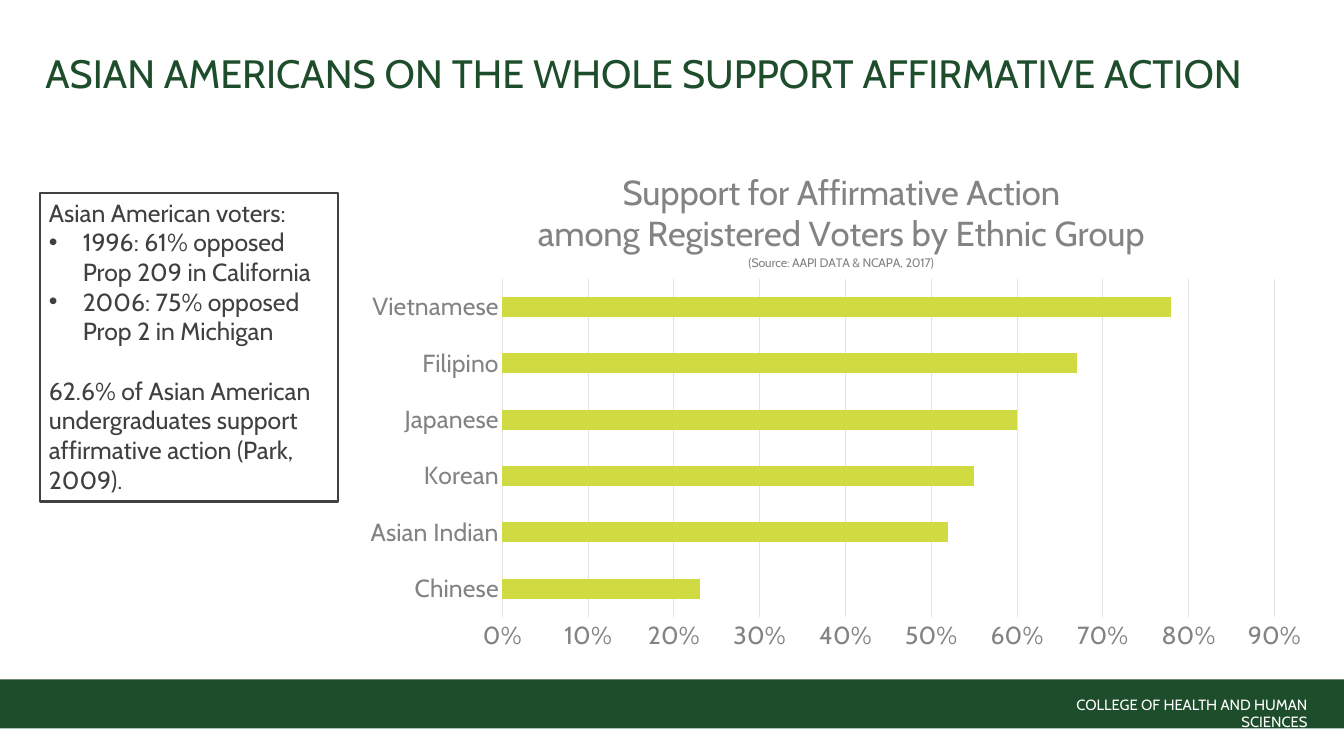
from dataclasses import dataclass

from lxml.etree import SubElement as Sub
from pptx import Presentation
from pptx.chart.data import CategoryChartData as Data
from pptx.dml.color import RGBColor as RGB
from pptx.enum.chart import XL_CHART_TYPE as Kind, XL_TICK_MARK as Tick
from pptx.enum.shapes import MSO_SHAPE as Form
from pptx.enum.text import MSO_ANCHOR as Anchor, MSO_AUTO_SIZE as Fit, PP_ALIGN as Align
from pptx.oxml.ns import qn
from pptx.util import Inches, Pt


@dataclass(frozen=True)
class Theme:
    face: str = "Cabin"
    green: RGB = RGB(0x1E, 0x4D, 0x2B)
    lime: RGB = RGB(0xD0, 0xDB, 0x42)
    ink: RGB = RGB(0x40, 0x40, 0x40)
    edge: RGB = RGB(0x40, 0x41, 0x40)
    gray: RGB = RGB(0x82, 0x84, 0x82)
    rule: RGB = RGB(0xE2, 0xE3, 0xE2)
    white: RGB = RGB(0xFF, 0xFF, 0xFF)
    head: int = 32
    chart: int = 28
    body: int = 20
    foot: int = 12
    note: int = 10


theme = Theme()
deck = Presentation()
deck.slide_width, deck.slide_height = Inches(15.11), Inches(8.5)
slide = deck.slides.add_slide(deck.slide_layouts[1])
shapes = slide.shapes


def area(x, y, w, h):
    """Turn percent shares of the slide into lengths."""
    wide, high = deck.slide_width, deck.slide_height
    return [int(part * full / 100) for part, full in zip((x, y, w, h), (wide, high) * 2)]


def style(font, size, color):
    font.name, font.size, font.bold = theme.face, Pt(size), False
    font.color.rgb = color


# Footer band
band = shapes.add_shape(Form.RECTANGLE, *area(0, 89.88, 100, 6.47))
band.shadow.inherit = False
band.fill.solid()
band.fill.fore_color.rgb = theme.green
band.line.fill.background()

foot = shapes.add_textbox(*area(75.38, 91.41, 22.57, 3.53)).text_frame
foot.word_wrap = True
foot.text = "COLLEGE OF HEALTH AND HUMAN SCIENCES"
foot.paragraphs[0].alignment = Align.RIGHT
style(foot.paragraphs[0].runs[0].font, theme.foot, theme.white)

# Title
title = shapes.title
title.left, title.top, title.width, title.height = area(2.98, 5.76, 93.65, 12.12)
frame = title.text_frame
frame.text = "ASIAN AMERICANS ON THE WHOLE SUPPORT AFFIRMATIVE ACTION"
frame.auto_size, frame.vertical_anchor = Fit.NONE, Anchor.TOP
frame.margin_left = frame.margin_right = Inches(0.06)
frame.margin_top = frame.margin_bottom = Inches(0.06)
frame.paragraphs[0].alignment = Align.LEFT
style(frame.paragraphs[0].runs[0].font, theme.head, theme.green)

# Boxed list: text, bullet, points before
facts = [
    ("Asian American voters:", False, 0),
    ("1996: 61% opposed Prop 209 in California", True, 0),
    ("2006: 75% opposed Prop 2 in Michigan", True, 0),
    ("62.6% of Asian American undergraduates support affirmative action (Park, 2009).", False, 24),
]
box = slide.placeholders[1]
box.left, box.top, box.width, box.height = area(2.98, 25.53, 22.17, 40.82)
box.fill.solid()
box.fill.fore_color.rgb = theme.white
box.line.color.rgb, box.line.width = theme.edge, Pt(2)
frame = box.text_frame
frame.text = "\n".join(text for text, _, _ in facts)
frame.auto_size, frame.vertical_anchor = Fit.NONE, Anchor.TOP
for para, (_, dot, gap) in zip(frame.paragraphs, facts):
    props = para._p.get_or_add_pPr()
    indent = Inches(0.38) if dot else 0
    props.set("marL", str(indent))
    props.set("indent", str(-indent))
    if dot:
        Sub(props, qn("a:buFont"), typeface="Arial")
        Sub(props, qn("a:buChar"), char="•")
    else:
        Sub(props, qn("a:buNone"))
    para.space_before = Pt(gap)
    style(para.runs[0].font, theme.body, theme.ink)

# Chart
data = Data(number_format="0%")
data.categories = ["Chinese", "Asian Indian", "Korean", "Japanese", "Filipino", "Vietnamese"]
data.add_series("Series 1", [0.23, 0.52, 0.55, 0.6, 0.67, 0.78])
chart = shapes.add_chart(Kind.BAR_CLUSTERED, *area(26.14, 19.41, 72.07, 68), data).chart
style(chart.font, theme.note, theme.ink)
chart.has_legend = False
plot = chart.plots[0]
plot.gap_width, plot.vary_by_categories = 182, False
bars = plot.series[0].format.fill
bars.solid()
bars.fore_color.rgb = theme.lime

# Chart title
chart.has_title = True
frame = chart.chart_title.text_frame
frame.text = ("Support for Affirmative Action\namong Registered Voters by Ethnic Group\n"
              "(Source: AAPI DATA & NCAPA, 2017)")
for para, size in zip(frame.paragraphs, (theme.chart, theme.chart, theme.note)):
    para.alignment = Align.CENTER
    style(para.runs[0].font, size, theme.gray)

# Axes
cats, vals = chart.category_axis, chart.value_axis
for axis in (cats, vals):
    axis.major_tick_mark = axis.minor_tick_mark = Tick.NONE
    style(axis.tick_labels.font, theme.body, theme.gray)
cats.has_major_gridlines = False
vals.has_major_gridlines = True
vals.minimum_scale, vals.maximum_scale, vals.major_unit = 0, 0.9, 0.1
vals.tick_labels.number_format = "0%"
vals.tick_labels.number_format_is_linked = False
vals.format.line.fill.background()
for line in (cats.format.line, vals.major_gridlines.format.line):
    line.color.rgb, line.width = theme.rule, Pt(0.75)

# Places of the title and the plot, as shares of the chart
space = chart._chartSpace
spots = [
    ("c:title", 1, {"xMode": "edge", "yMode": "edge", "x": 0.19, "y": 0.04}),
    ("c:plotArea", 0, {"layoutTarget": "inner", "xMode": "edge", "yMode": "edge",
                       "x": 0.156, "y": 0.257, "w": 0.797, "h": 0.658}),
]
for tag, slot, spot in spots:
    part = space.chart.find(qn(tag))
    for old in part.findall(qn("c:layout")):
        part.remove(old)
    layout = Sub(part, qn("c:layout"))
    part.insert(slot, layout)
    manual = Sub(layout, qn("c:manualLayout"))
    for name, value in spot.items():
        Sub(manual, qn("c:" + name), val=str(value))

deck.save("out.pptx")
